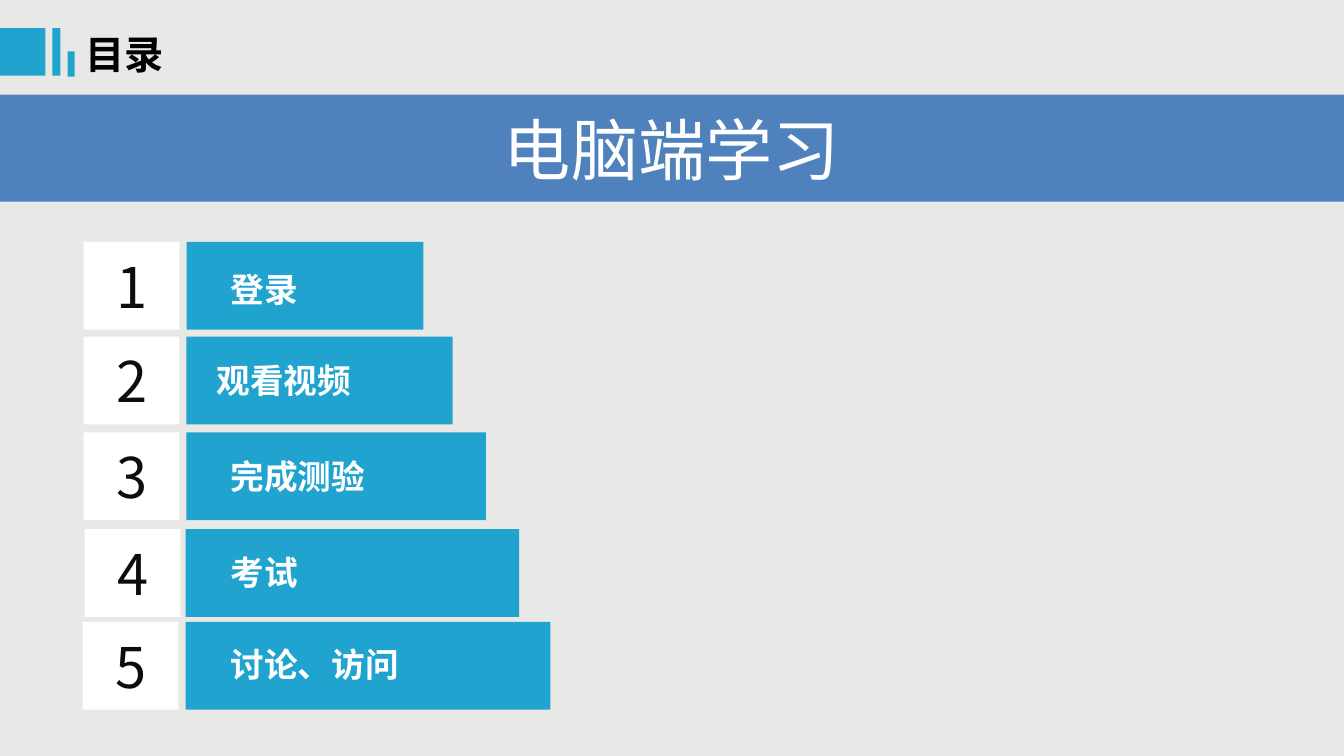
from pptx import Presentation
from pptx.dml.color import RGBColor
from pptx.enum.shapes import MSO_SHAPE
from pptx.enum.text import MSO_ANCHOR, MSO_AUTO_SIZE, PP_ALIGN
from pptx.oxml.ns import qn
from pptx.util import Inches, Pt
from lxml import etree

RECTANGLE = MSO_SHAPE.RECTANGLE
TOP, MIDDLE = MSO_ANCHOR.TOP, MSO_ANCHOR.MIDDLE
LEFT, CENTER = PP_ALIGN.LEFT, PP_ALIGN.CENTER
FIT_SHAPE = MSO_AUTO_SIZE.SHAPE_TO_FIT_TEXT
FONT = "Noto Sans CJK SC"
COLORS = {
    "background": "E8E8E6",
    "accent": "21A3D0",
    "banner": "4F81BD",
    "white": "FFFFFF",
    "black": "000000",
    "number": "0D0D0D",
}


def add_block(left, top, width, height, color):
    """Add a plain filled rectangle, measured in inches."""
    block = slide.shapes.add_shape(
        RECTANGLE, Inches(left), Inches(top), Inches(width), Inches(height))
    block.shadow.inherit = False
    block.fill.solid()
    block.fill.fore_color.rgb = RGBColor.from_string(COLORS[color])
    block.line.fill.background()
    return block


def write(shape, text, size, color, bold=False, align=LEFT, anchor=TOP):
    frame = shape.text_frame
    frame.word_wrap = True
    frame.vertical_anchor = anchor
    paragraph = frame.paragraphs[0]
    paragraph.alignment = align
    run = paragraph.add_run()
    run.text = text
    run.font.size = Pt(size)
    run.font.bold = bold
    run.font.color.rgb = RGBColor.from_string(COLORS[color])
    run.font.name = FONT
    east_asian = etree.SubElement(run._r.get_or_add_rPr(), qn("a:ea"))
    east_asian.set("typeface", FONT)


prs = Presentation()
prs.slide_width, prs.slide_height = Inches(13.33), Inches(7.5)
slide = prs.slides.add_slide(prs.slide_layouts[5])
slide.background.fill.solid()
slide.background.fill.fore_color.rgb = RGBColor.from_string(COLORS["background"])

# Header
for left, top, width, height in [
    (0, 0.28, 0.45, 0.47),
    (0.52, 0.28, 0.08, 0.47),
    (0.67, 0.51, 0.07, 0.25),
]:
    add_block(left, top, width, height, "accent")

title = slide.shapes.title
title.left, title.top = Inches(0.75), Inches(0.25)
title.width, title.height = Inches(1.15), Inches(0.57)
write(title, "目录", 28, "black", bold=True)
title.text_frame.auto_size = FIT_SHAPE

banner = add_block(0, 0.94, 13.33, 1.06, "banner")
write(banner, "电脑端学习", 48, "white", align=CENTER, anchor=MIDDLE)

# Contents: text, row top, number left, bar left, bar width, label left, label top
chapters = [
    ("登录", 2.4, 0.83, 1.85, 2.35, 2.19, 2.62),
    ("观看视频", 3.34, 0.83, 1.85, 2.64, 2.05, 3.52),
    ("完成测验", 4.29, 0.83, 1.85, 2.97, 2.19, 4.47),
    ("考试", 5.25, 0.84, 1.84, 3.31, 2.19, 5.43),
    ("讨论、访问", 6.17, 0.82, 1.84, 3.62, 2.19, 6.34),
]
for number, chapter in enumerate(chapters, start=1):
    text, top, number_left, bar_left, bar_width, label_left, label_top = chapter
    add_block(bar_left, top, bar_width, 0.87, "accent")
    number_box = add_block(number_left, top, 0.95, 0.87, "white")
    write(number_box, str(number), 40, "number", align=CENTER, anchor=MIDDLE)
    label = slide.shapes.add_textbox(
        Inches(label_left), Inches(label_top),
        Inches(bar_left + bar_width - label_left), Inches(0.5))
    write(label, text, 24, "white", bold=True)
    label.text_frame.auto_size = FIT_SHAPE

prs.save("out.pptx")
